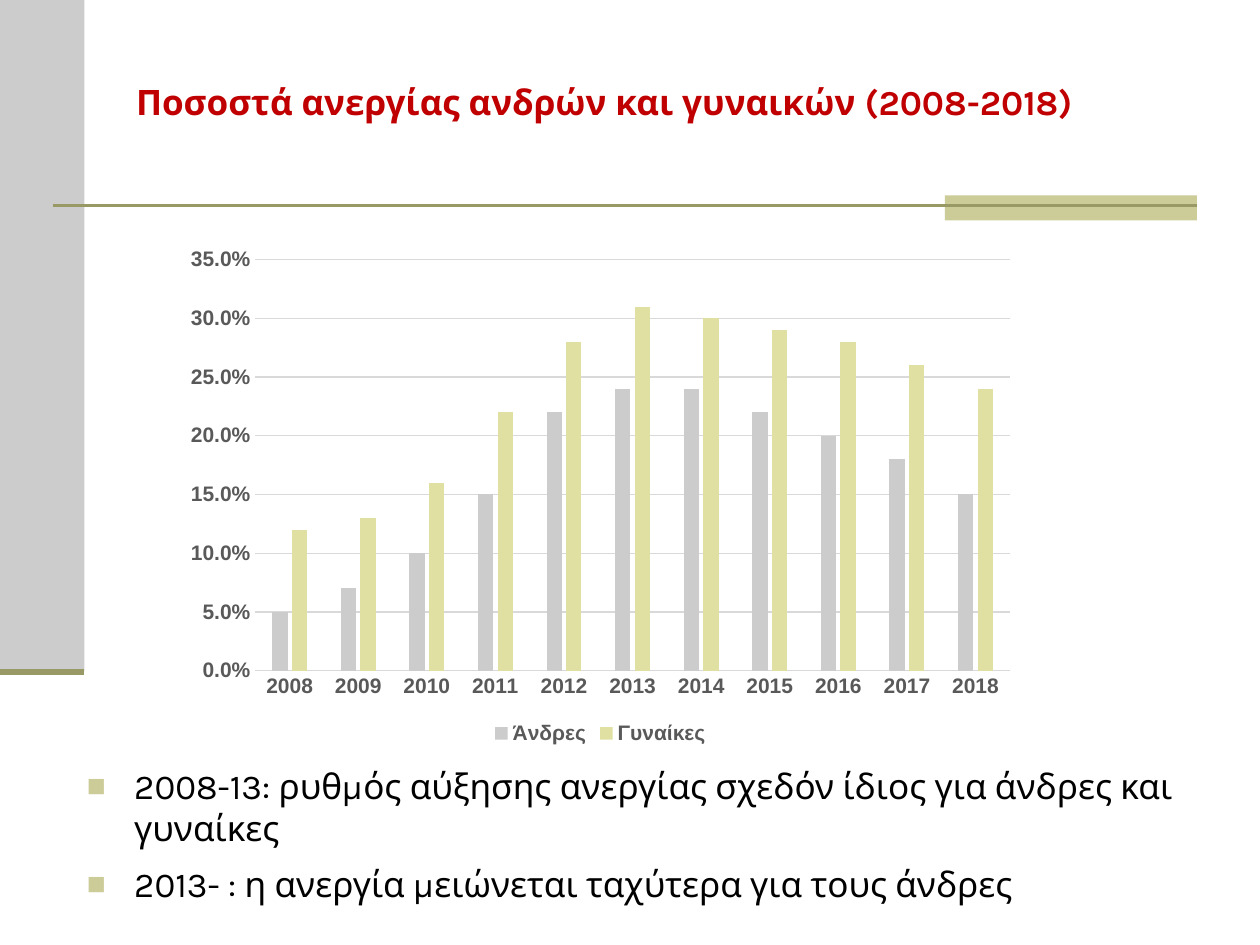
"""Builds the slide on unemployment rates of men and women, 2008-2018."""
import lxml.etree
import pptx
import pptx.chart.data
import pptx.dml.color
import pptx.enum.chart
import pptx.enum.shapes
import pptx.enum.text
import pptx.oxml.ns
import pptx.util

Inches = pptx.util.Inches
Pt = pptx.util.Pt
qn = pptx.oxml.ns.qn

COLORS = {
    "grey": "CCCCCC", "sand": "CCCC99", "olive": "999966", "red": "C00000",
    "black": "000000", "label": "595959", "grid": "D9D9D9", "lime": "E0E0A3",
}
YEARS = [str(year) for year in range(2008, 2019)]
RATES = [
    ("Άνδρες", "grey", [0.05, 0.07, 0.1, 0.15, 0.22, 0.24, 0.24, 0.22, 0.2, 0.18, 0.15]),
    ("Γυναίκες", "lime", [0.12, 0.13, 0.16, 0.22, 0.28, 0.31, 0.3, 0.29, 0.28, 0.26, 0.24]),
]
POINTS = [
    "2008-13: ρυθμός αύξησης ανεργίας σχεδόν ίδιος για άνδρες και γυναίκες",
    "2013- : η ανεργία μειώνεται ταχύτερα για τους άνδρες",
]


class Deck:
    """Holds the style and the current slide."""

    text_font = "Karla"
    chart_font = "Arial"
    size = Pt(20)
    indent = Inches(3 / 8)

    def __init__(self, prs):
        self.slide = prs.slides.add_slide(prs.slide_layouts[1])

    def color(self, name):
        return pptx.dml.color.RGBColor.from_string(COLORS[name])

    def box(self, left, top, width, height, fill):
        sp = self.slide.shapes.add_shape(
            pptx.enum.shapes.MSO_SHAPE.RECTANGLE,
            Inches(left), Inches(top), Inches(width), Inches(height))
        sp.shadow.inherit = False
        sp.fill.solid()
        sp.fill.fore_color.rgb = self.color(fill)
        sp.line.fill.background()

    def rule(self, left, right, y, width):
        line = self.slide.shapes.add_connector(
            pptx.enum.shapes.MSO_CONNECTOR.STRAIGHT,
            Inches(left), Inches(y), Inches(right), Inches(y))
        line.line.color.rgb = self.color("olive")
        line.line.width = Pt(width)
        sp_pr = line._element.find(qn("p:spPr"))
        lxml.etree.SubElement(sp_pr, qn("a:effectLst"))

    def place(self, sp, left, top, width, height, anchor):
        sp.left, sp.top = Inches(left), Inches(top)
        sp.width, sp.height = Inches(width), Inches(height)
        tf = sp.text_frame
        tf.word_wrap = True
        tf.auto_size = pptx.enum.text.MSO_AUTO_SIZE.NONE
        tf.vertical_anchor = anchor
        return tf

    def run(self, p, text, color, bold=False):
        p.alignment = pptx.enum.text.PP_ALIGN.LEFT
        r = p.add_run()
        r.text = text
        r.font.name = self.text_font
        r.font.size = self.size
        r.font.bold = bold
        r.font.color.rgb = self.color(color)

    def title(self, text, *at):
        tf = self.place(self.slide.shapes.title, *at, pptx.enum.text.MSO_ANCHOR.MIDDLE)
        self.run(tf.paragraphs[0], text, "red", bold=True)

    def bullet(self, p):
        p_pr = p._p.get_or_add_pPr()
        p_pr.set("marL", str(self.indent))
        p_pr.set("indent", str(-self.indent))
        clr = lxml.etree.SubElement(p_pr, qn("a:buClr"))
        lxml.etree.SubElement(clr, qn("a:srgbClr"), val=COLORS["sand"])
        lxml.etree.SubElement(p_pr, qn("a:buSzPct"), val="90000")
        lxml.etree.SubElement(p_pr, qn("a:buFont"), typeface=self.chart_font)
        lxml.etree.SubElement(p_pr, qn("a:buChar"), char="■")

    def bullets(self, items, *at):
        tf = self.place(self.slide.placeholders[1], *at, pptx.enum.text.MSO_ANCHOR.TOP)
        for i, text in enumerate(items):
            p = tf.add_paragraph() if i else tf.paragraphs[0]
            self.bullet(p)
            p.space_before = Pt(4 if i else 0)
            p.space_after = Pt(4)
            self.run(p, text, "black")

    def chart_text(self, font):
        font.name = self.chart_font
        font.size = Pt(12)
        font.bold = True
        font.color.rgb = self.color("label")

    def column_chart(self, cats, series, left, top, width, height):
        data = pptx.chart.data.CategoryChartData(number_format="0.0%")
        data.categories = cats
        for name, _, values in series:
            data.add_series(name, values)
        chart = self.slide.shapes.add_chart(
            pptx.enum.chart.XL_CHART_TYPE.COLUMN_CLUSTERED,
            Inches(left), Inches(top), Inches(width), Inches(height), data).chart
        chart.has_title = False
        chart.has_legend = True
        chart.legend.position = pptx.enum.chart.XL_LEGEND_POSITION.BOTTOM
        chart.legend.include_in_layout = False
        for part in (chart, chart.legend, chart.category_axis.tick_labels,
                     chart.value_axis.tick_labels):
            self.chart_text(part.font)

        plot = chart.plots[0]
        plot.vary_by_categories = False
        plot.gap_width = 219
        plot.overlap = -27
        for ser, (_, fill, _) in zip(plot.series, series):
            ser.format.fill.solid()
            ser.format.fill.fore_color.rgb = self.color(fill)

        value_axis = chart.value_axis
        value_axis.minimum_scale = 0
        value_axis.maximum_scale = 0.35
        value_axis.major_unit = 0.05
        value_axis.tick_labels.number_format = "0.0%"
        value_axis.tick_labels.number_format_is_linked = False
        value_axis.format.line.fill.background()
        for axis in (chart.category_axis, value_axis):
            axis.major_tick_mark = pptx.enum.chart.XL_TICK_MARK.NONE
        for part in (chart.category_axis, value_axis.major_gridlines):
            part.format.line.color.rgb = self.color("grid")
            part.format.line.width = Pt(0.75)


def main():
    prs = pptx.Presentation()
    prs.slide_width, prs.slide_height = Inches(10), Inches(7.5)
    deck = Deck(prs)
    deck.box(0, 0, 0.67, 5.33, "grey")
    deck.box(7.5, 1.55, 2, 0.2, "sand")
    deck.rule(0.42, 9.5, 1.63, 1.5)
    deck.rule(0, 0.67, 5.33, 3.5)
    deck.title("Ποσοστά ανεργίας ανδρών και γυναικών (2008-2018)", 0.98, 0.3, 8.52, 1.01)
    deck.bullets(POINTS, 0.59, 6.02, 9.28, 1.48)
    deck.column_chart(YEARS, RATES, 1.38, 1.89, 6.77, 4.06)
    prs.save("out.pptx")


if __name__ == "__main__":
    main()
